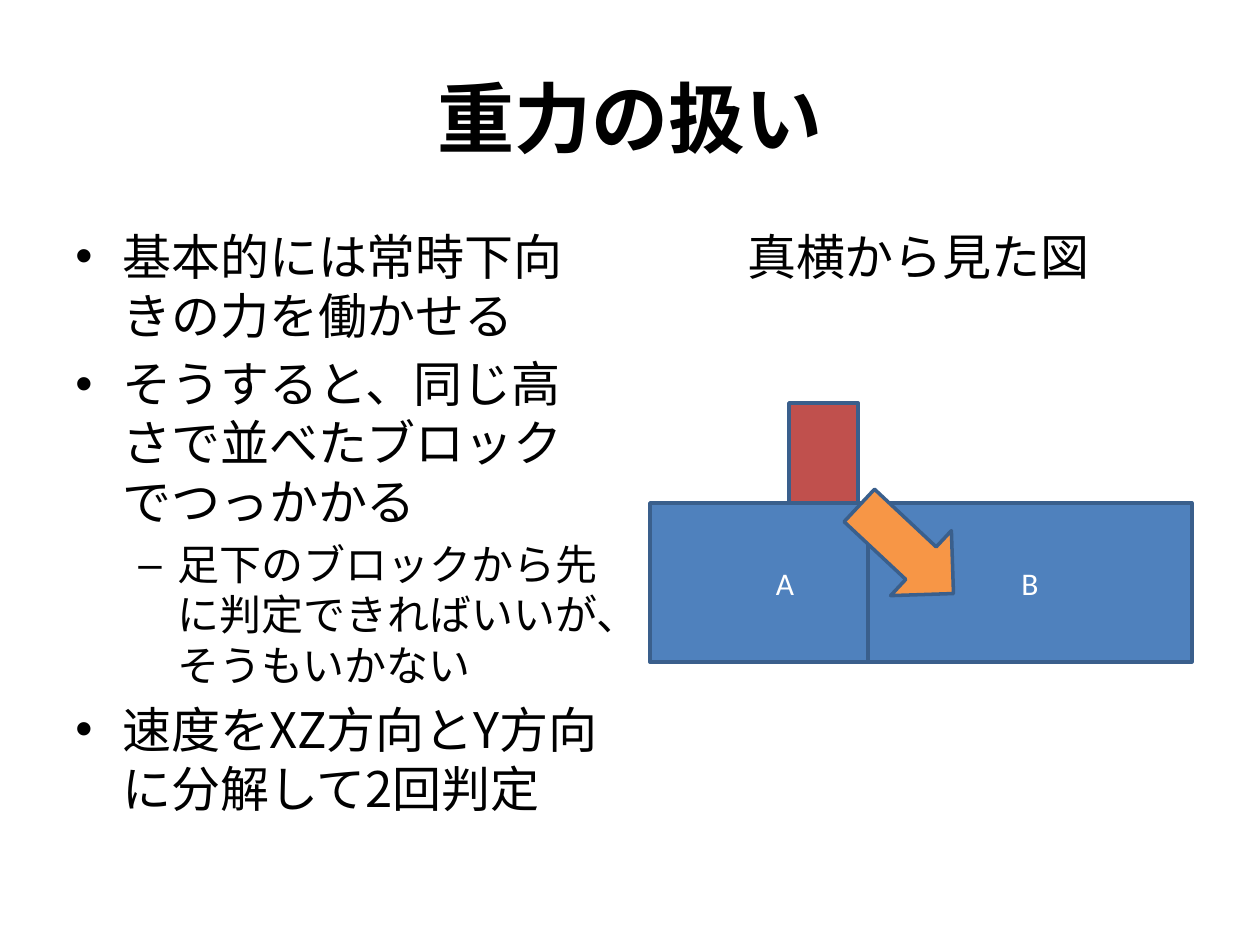
from lxml import etree
from pptx import Presentation
from pptx.dml.color import RGBColor
from pptx.enum.shapes import MSO_SHAPE as Kind
from pptx.enum.text import MSO_ANCHOR as Anchor, PP_ALIGN as Align
from pptx.oxml.ns import qn
from pptx.util import Emu, Pt

PX = 914400 // 126
JP = "Noto Sans CJK JP"


def color(text):
    return RGBColor.from_string(text)


def style(para, size, font=JP, tint="000000", bold=False):
    """Format every run, with one font for Latin and Japanese letters."""
    for run in para.runs:
        run.font.size = Pt(size)
        run.font.name = font
        run.font.bold = bold
        run.font.color.rgb = color(tint)
        etree.SubElement(run._r.rPr, qn("a:ea")).set("typeface", JP)


deck = Presentation()
deck.slide_width, deck.slide_height = 1260 * PX, 945 * PX
slide = deck.slides.add_slide(deck.slide_layouts[6])
shapes = slide.shapes

# Text frames
frames = []
for box in [(63, 38, 1134, 158), (63, 220, 557, 624), (640, 220, 557, 624)]:
    frame = shapes.add_textbox(*[n * PX for n in box]).text_frame
    frame.word_wrap = True
    frames.append(frame)
title, body, side = frames

title.text = "重力の扱い"
title.vertical_anchor = Anchor.MIDDLE
title.paragraphs[0].alignment = Align.CENTER
style(title.paragraphs[0], 44, bold=True)

side.text = "真横から見た図"
side.paragraphs[0].alignment = Align.CENTER
side.paragraphs[0].space_before = Pt(5.6)
style(side.paragraphs[0], 28)

# Bullets: mark, size, left margin and hanging indent by level
levels = [("•", 28, 47, 47), ("–", 24, 102, 39)]
items = [
    (0, "基本的には常時下向きの力を働かせる"),
    (0, "そうすると、同じ高さで並べたブロックでつっかかる"),
    (1, "足下のブロックから先に判定できればいいが、そうもいかない"),
    (0, "速度をXZ方向とY方向に分解して2回判定"),
]
body.text = "\n".join(text for _, text in items)
for para, (level, _) in zip(body.paragraphs, items):
    mark, size, left, hang = levels[level]
    para.level = level
    para.space_before = Pt(size * 0.2)
    style(para, size)
    props = para._p.get_or_add_pPr()
    props.set("marL", str(left * PX))
    props.set("indent", str(-hang * PX))
    etree.SubElement(props, qn("a:buFont")).set("typeface", "Arial")
    etree.SubElement(props, qn("a:buChar")).set("char", mark)

# Side view: two blocks, the player and the direction of motion
parts = [
    (Kind.RECTANGLE, (650, 503, 270, 159), "4F81BD", 0, "A"),
    (Kind.RECTANGLE, (868, 503, 324, 159), "4F81BD", 0, "B"),
    (Kind.RECTANGLE, (789, 403, 69, 100), "C0504D", 0, ""),
    (Kind.DOWN_ARROW, (862, 485, 89, 129), "F79646", 313.1, ""),
]
for kind, box, fill, turn, label in parts:
    part = shapes.add_shape(kind, *[Emu(n * PX) for n in box])
    part.shadow.inherit = False
    part.rotation = turn
    part.fill.solid()
    part.fill.fore_color.rgb = color(fill)
    part.line.color.rgb = color("3A5F8C")
    part.line.width = Pt(2)
    if label:
        part.text_frame.text = label
        part.text_frame.vertical_anchor = Anchor.MIDDLE
        para = part.text_frame.paragraphs[0]
        para.alignment = Align.CENTER
        style(para, 18, "Calibri", "FFFFFF")

deck.save("out.pptx")
